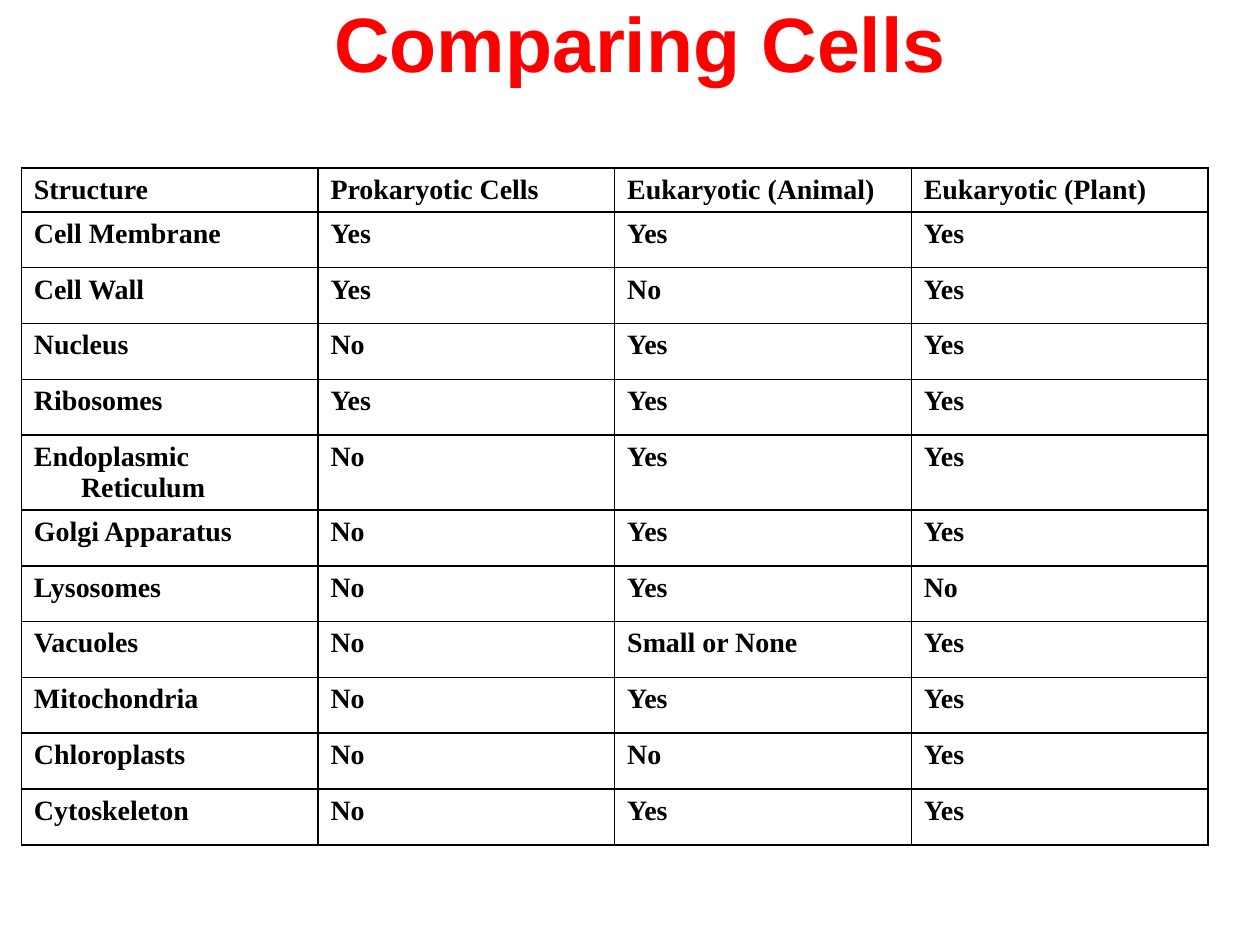
from lxml.etree import SubElement
from pptx import Presentation
from pptx.dml.color import RGBColor
from pptx.enum.text import MSO_ANCHOR, PP_ALIGN
from pptx.oxml.ns import qn
from pptx.util import Cm, Pt

COLORS = {"title": "FF0000", "text": "000000", "border": "000000"}

HEADINGS = ["Structure", "Prokaryotic Cells", "Eukaryotic (Animal)", "Eukaryotic (Plant)"]
STRUCTURES = [
    ["Cell Membrane", "Yes", "Yes", "Yes"],
    ["Cell Wall", "Yes", "No", "Yes"],
    ["Nucleus", "No", "Yes", "Yes"],
    ["Ribosomes", "Yes", "Yes", "Yes"],
    ["Endoplasmic Reticulum", "No", "Yes", "Yes"],
    ["Golgi Apparatus", "No", "Yes", "Yes"],
    ["Lysosomes", "No", "Yes", "No"],
    ["Vacuoles", "No", "Small or None", "Yes"],
    ["Mitochondria", "No", "Yes", "Yes"],
    ["Chloroplasts", "No", "No", "Yes"],
    ["Cytoskeleton", "No", "Yes", "Yes"],
]
ROWS = [HEADINGS] + STRUCTURES
COLUMN_WIDTH = Cm(5.98)
HEADER_HEIGHT = Cm(0.71)
ROW_HEIGHT = Cm(1.125)
HANGING_INDENT = Cm(0.95)


def set_font(paragraph, name, size, color):
    paragraph.font.name = name
    paragraph.font.size = Pt(size)
    paragraph.font.bold = True
    paragraph.font.color.rgb = RGBColor.from_string(color)


def add_borders(cell, color):
    properties = cell._tc.get_or_add_tcPr()
    for side in ("a:lnL", "a:lnR", "a:lnT", "a:lnB"):
        line = SubElement(properties, qn(side), w=str(Pt(1)))
        fill = SubElement(line, qn("a:solidFill"))
        SubElement(fill, qn("a:srgbClr"), val=color)


presentation = Presentation()
presentation.slide_width = Cm(25.4)
presentation.slide_height = Cm(19.05)
slide = presentation.slides.add_slide(presentation.slide_layouts[5])

# Title
title = slide.shapes.title
title.left, title.top, title.width, title.height = Cm(1.48), Cm(-0.43), Cm(22.86), Cm(2.54)
title.text_frame.text = "Comparing Cells"
title.text_frame.vertical_anchor = MSO_ANCHOR.MIDDLE
paragraph = title.text_frame.paragraphs[0]
paragraph.alignment = PP_ALIGN.CENTER
set_font(paragraph, "Arial", 44, COLORS["title"])

# Comparison table
table = slide.shapes.add_table(
    len(ROWS), len(HEADINGS), Cm(0.43), Cm(3.39),
    COLUMN_WIDTH * len(HEADINGS), HEADER_HEIGHT + ROW_HEIGHT * len(STRUCTURES),
).table
table.first_row = False
table.horz_banding = False
for column in table.columns:
    column.width = COLUMN_WIDTH
for row in table.rows:
    row.height = ROW_HEIGHT
table.rows[0].height = HEADER_HEIGHT

# Cell text, with a hanging indent
for row, values in zip(table.rows, ROWS):
    for cell, value in zip(row.cells, values):
        cell.text = value
        add_borders(cell, COLORS["border"])
        cell.fill.background()
        paragraph = cell.text_frame.paragraphs[0]
        paragraph_properties = paragraph._p.get_or_add_pPr()
        paragraph_properties.set("marL", str(HANGING_INDENT))
        paragraph_properties.set("indent", str(-HANGING_INDENT))
        set_font(paragraph, "Times New Roman", 16, COLORS["text"])

presentation.save("out.pptx")
